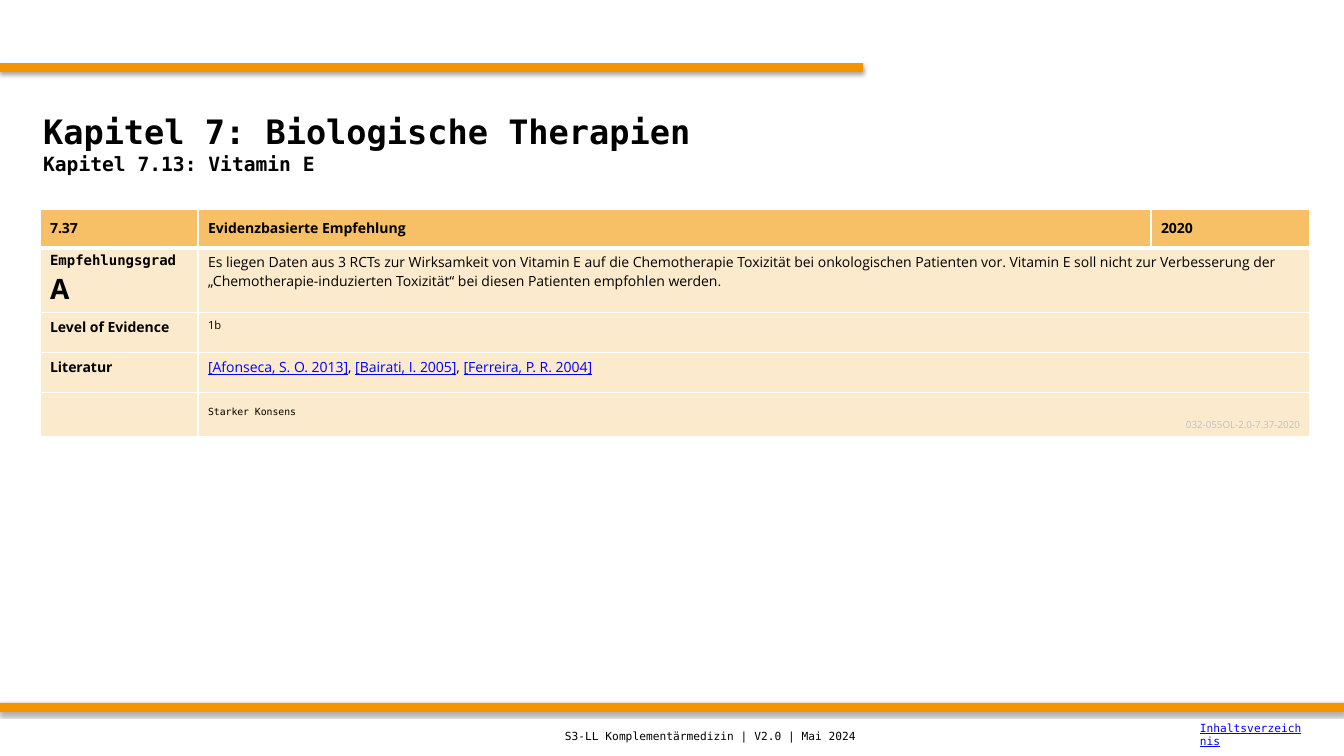
from dataclasses import dataclass
from lxml.etree import SubElement as Sub
from pptx import Presentation
from pptx.dml.color import RGBColor as Rgb
from pptx.enum.shapes import MSO_SHAPE as Shape
from pptx.enum.text import MSO_ANCHOR as Anchor, PP_ALIGN as Align
from pptx.oxml.ns import qn
from pptx.util import Emu, Pt


@dataclass(frozen=True)
class Theme:
    mono: str = "DejaVu Sans Mono"
    sans: str = "Open Sans"
    bar: str = "F29400"
    head: str = "F7BF66"
    body: str = "FCEACC"
    ink: str = "000000"
    link: str = "0000FF"
    pale: str = "BFBFBF"
    rule: str = "FFFFFF"
    title: int = 24
    sub: int = 14
    grade: int = 20
    text: int = 10
    small: int = 8
    tiny: int = 7


@dataclass(frozen=True)
class Line:
    text: object
    size: int = Theme.text
    face: str = Theme.sans
    bold: bool = False
    color: str = Theme.ink
    right: bool = False


T = Theme()
BARS = [(0, 63, 863, 9), (0, 703, 1344, 9)]
TITLE = [Line("Kapitel 7: Biologische Therapien", T.title, T.mono, True),
         Line("Kapitel 7.13: Vitamin E", T.sub, T.mono, True)]
COLS = [158, 953, 159]
ROWS = [39, 64, 40, 40, 44]
CELLS = [
    [[Line("7.37", bold=True)],
     [Line("Evidenzbasierte Empfehlung", bold=True)],
     [Line("2020", bold=True)]],
    [[Line("Empfehlungsgrad", face=T.mono, bold=True),
      Line("A", T.grade, bold=True)],
     [Line("Es liegen Daten aus 3 RCTs zur Wirksamkeit von Vitamin E auf die "
           "Chemotherapie Toxizität bei onkologischen Patienten vor. Vitamin E "
           "soll nicht zur Verbesserung der „Chemotherapie-induzierten "
           "Toxizität“ bei diesen Patienten empfohlen werden.")]],
    [[Line("Level of Evidence", bold=True)], [Line("1b", T.small)]],
    [[Line("Literatur", bold=True)],
     [Line(["[Afonseca, S. O. 2013]", ", ", "[Bairati, I. 2005]", ", ",
            "[Ferreira, P. R. 2004]"])]],
    [[], [Line("Starker Konsens", T.tiny, T.mono),
          Line("032-055OL-2.0-7.37-2020", T.tiny, color=T.pale, right=True)]],
]
NOTES = [
    ((555, 717, 555, 39),
     Line("S3-LL Komplementärmedizin | V2.0 | Mai 2024", T.small, T.mono)),
    ((1190, 715, 123, 39),
     Line(["Inhaltsverzeichnis"], T.small, T.mono)),
]


def px(n):
    return Emu(round(n * 9144000 / 1008))


def box(dims):
    return [px(n) for n in dims]


def paint(fill, color):
    fill.solid()
    fill.fore_color.rgb = Rgb.from_string(color)


def write(frame, lines):
    for i, line in enumerate(lines):
        para = frame.add_paragraph() if i else frame.paragraphs[0]
        para.alignment = Align.RIGHT if line.right else Align.LEFT
        font = para.font
        font.name, font.size, font.bold = line.face, Pt(line.size), line.bold
        font.color.rgb = Rgb.from_string(line.color)
        parts = [line.text] if isinstance(line.text, str) else line.text
        for part in parts:
            run = para.add_run()
            run.text = part
            if parts is line.text and part != ", ":
                run.font.underline = True
                run.font.color.rgb = Rgb.from_string(T.link)


def shade(shape):
    shape.shadow.inherit = False
    glow = shape._element.spPr.find(qn("a:effectLst"))
    cast = Sub(glow, qn("a:outerShdw"), blurRad=str(Pt(3.1)), dist=str(Pt(1.8)),
               dir="5400000", rotWithShape="0")
    tint = Sub(cast, qn("a:srgbClr"), val=T.ink)
    Sub(tint, qn("a:alpha"), val="35000")


def edge(cell, top, bottom):
    props = cell._tc.get_or_add_tcPr()
    for side, width in zip("LRTB", (1, 1, top, bottom)):
        line = Sub(props, qn("a:ln" + side), w=str(Pt(width)))
        Sub(Sub(line, qn("a:solidFill")), qn("a:srgbClr"), val=T.rule)


def grid(slide):
    dims = box((40, 209, sum(COLS), sum(ROWS)))
    table = slide.shapes.add_table(len(ROWS), len(COLS), *dims).table
    for col, width in zip(table.columns, COLS):
        col.width = px(width)
    for row, high in zip(table.rows, ROWS):
        row.height = px(high)
    for r, row in enumerate(CELLS):
        for c in range(len(COLS)):
            cell = table.cell(r, c)
            edge(cell, 3 if r == 1 else 1, 1 if r else 3)
            paint(cell.fill, T.body if r else T.head)
        if len(row) < len(COLS):
            table.cell(r, 1).merge(table.cell(r, 2))
        for c, lines in enumerate(row):
            cell = table.cell(r, c)
            write(cell.text_frame, lines)
            if r == 0:
                cell.vertical_anchor = Anchor.MIDDLE
            elif len(lines) > 1 and c == 1:
                cell.vertical_anchor = Anchor.BOTTOM


def main():
    deck = Presentation()
    deck.slide_width, deck.slide_height = px(1344), px(756)
    slide = deck.slides.add_slide(deck.slide_layouts[5])
    for dims in BARS:
        bar = slide.shapes.add_shape(Shape.RECTANGLE, *box(dims))
        paint(bar.fill, T.bar)
        bar.line.fill.background()
        shade(bar)
    title = slide.shapes.title
    title.left, title.top, title.width, title.height = box((33, 84, 1277, 118))
    title.text_frame.vertical_anchor = Anchor.MIDDLE
    write(title.text_frame, TITLE)
    grid(slide)
    for dims, line in NOTES:
        frame = slide.shapes.add_textbox(*box(dims)).text_frame
        frame.word_wrap = True
        frame.vertical_anchor = Anchor.MIDDLE
        write(frame, [line])
    deck.save("out.pptx")


if __name__ == "__main__":
    main()
